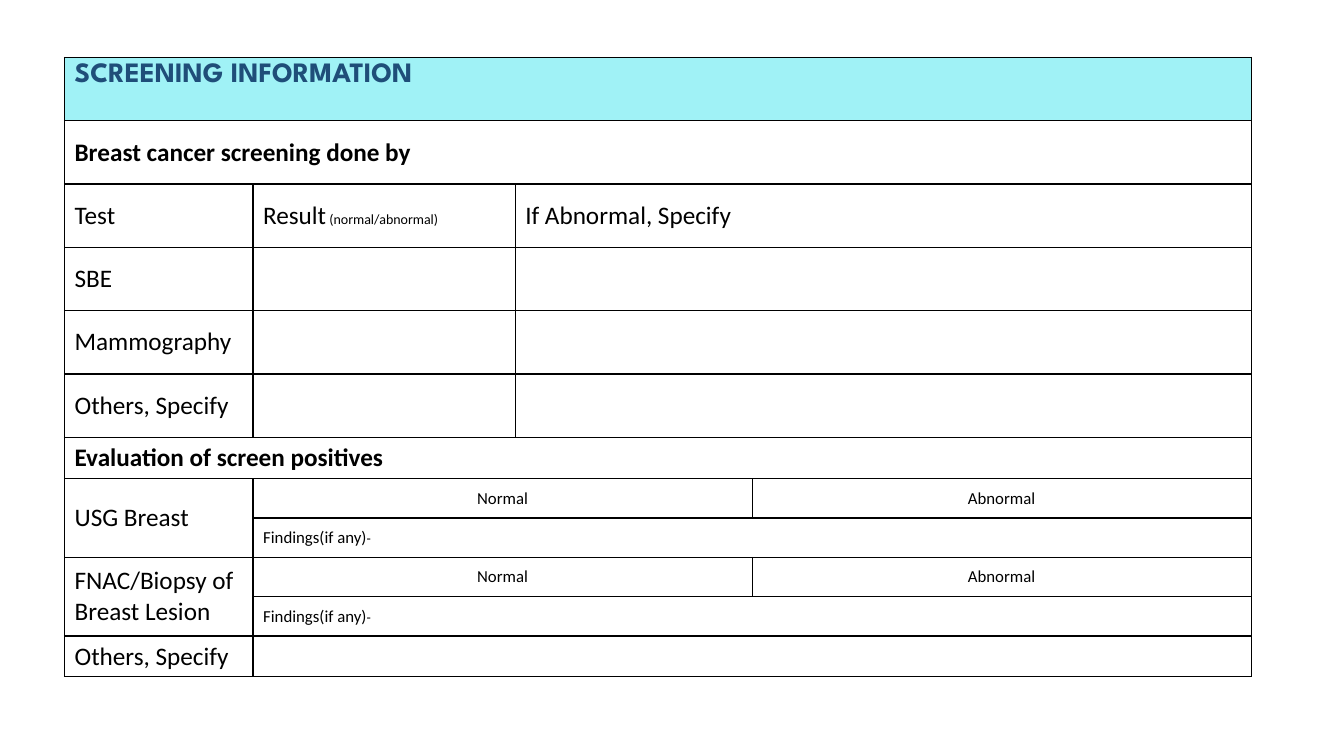
import pptx
import pptx.util
import pptx.dml.color
import pptx.enum.text
import pptx.oxml.ns
import lxml.etree

Inches = pptx.util.Inches
ALIGN = pptx.enum.text.PP_ALIGN
MIDDLE = pptx.enum.text.MSO_ANCHOR.MIDDLE
TOP = pptx.enum.text.MSO_ANCHOR.TOP
COLORS = {"ink": "000000", "title": "1F4E79", "band": "A0F2F6"}
LEFT, WIDTH, FIRST = 0.64, 11.77, 1.87


def color(name):
    return pptx.dml.color.RGBColor.from_string(COLORS[name])


def edge(cell):
    """Draw a thin line on all four sides of a cell."""
    props = cell._tc.get_or_add_tcPr()
    qn = pptx.oxml.ns.qn
    for spot, side in enumerate(("lnL", "lnR", "lnT", "lnB")):
        line = lxml.etree.Element(qn("a:" + side), w=str(pptx.util.Pt(1)))
        fill = lxml.etree.SubElement(line, qn("a:solidFill"))
        lxml.etree.SubElement(fill, qn("a:srgbClr"), val=COLORS["ink"])
        props.insert(spot, line)


def write(cell, text, size=18, bold=False, font="Calibri", ink="ink",
          align=ALIGN.LEFT, anchor=MIDDLE, tail="", small=10):
    cell.vertical_anchor = anchor
    para = cell.text_frame.paragraphs[0]
    para.alignment = align
    for words, points in ((text, size), (tail, small)):
        if words:
            run = para.add_run()
            run.text = words
            run.font.size = pptx.util.Pt(points)
            run.font.bold = bold
            run.font.name = font
            run.font.color.rgb = color(ink)


def grid(slide, box, cols, rows):
    """Add a plain ruled table in the box."""
    frame = slide.shapes.add_table(len(rows), len(cols), *map(Inches, box))
    table = frame.table
    table.first_row = table.horz_banding = False
    for col, width in zip(table.columns, cols):
        col.width = Inches(width)
    for row, height in zip(table.rows, rows):
        row.height = Inches(height)
        for cell in row.cells:
            cell.fill.background()
            edge(cell)
    return table


def screening(slide, box):
    left, top, width, height = box
    cols = [FIRST, 2.6, width - FIRST - 2.6]
    table = grid(slide, box, cols, [height / 6] * 6)
    for row in (0, 1):
        table.cell(row, 0).merge(table.cell(row, 2))
    title = table.cell(0, 0)
    title.fill.solid()
    title.fill.fore_color.rgb = color("band")
    write(title, "SCREENING INFORMATION", size=20, bold=True,
          font="League Spartan", ink="title", anchor=TOP)
    write(table.cell(1, 0), "Breast cancer screening done by", bold=True)
    for row, name in enumerate(("Test", "SBE", "Mammography", "Others, Specify"), 2):
        write(table.cell(row, 0), name)
    write(table.cell(2, 1), "Result", tail=" (normal/abnormal)")
    write(table.cell(2, 2), "If Abnormal, Specify")


def review(slide, box):
    left, top, width, height = box
    half = (width - FIRST) / 2
    table = grid(slide, box, [FIRST, half, half], [0.41] + [0.39] * 5)
    table.cell(0, 0).merge(table.cell(0, 2))
    write(table.cell(0, 0), "Evaluation of screen positives", bold=True, anchor=TOP)
    for row, name in ((1, "USG Breast"), (3, "FNAC/Biopsy of Breast Lesion")):
        table.cell(row, 0).merge(table.cell(row + 1, 0))
        table.cell(row + 1, 1).merge(table.cell(row + 1, 2))
        write(table.cell(row, 0), name)
        for col, state in enumerate(("Normal", "Abnormal"), 1):
            write(table.cell(row, col), state, size=12, align=ALIGN.CENTER)
        write(table.cell(row + 1, 1), "Findings(if any)", size=12, tail="-")
    table.cell(5, 1).merge(table.cell(5, 2))
    write(table.cell(5, 0), "Others, Specify")


def main():
    deck = pptx.Presentation()
    deck.slide_width, deck.slide_height = Inches(13.33), Inches(7.5)
    slide = deck.slides.add_slide(deck.slide_layouts[6])
    review(slide, (LEFT, 4.34, WIDTH, 2.36))
    screening(slide, (LEFT, 0.57, WIDTH, 3.77))
    deck.save("out.pptx")


if __name__ == "__main__":
    main()
